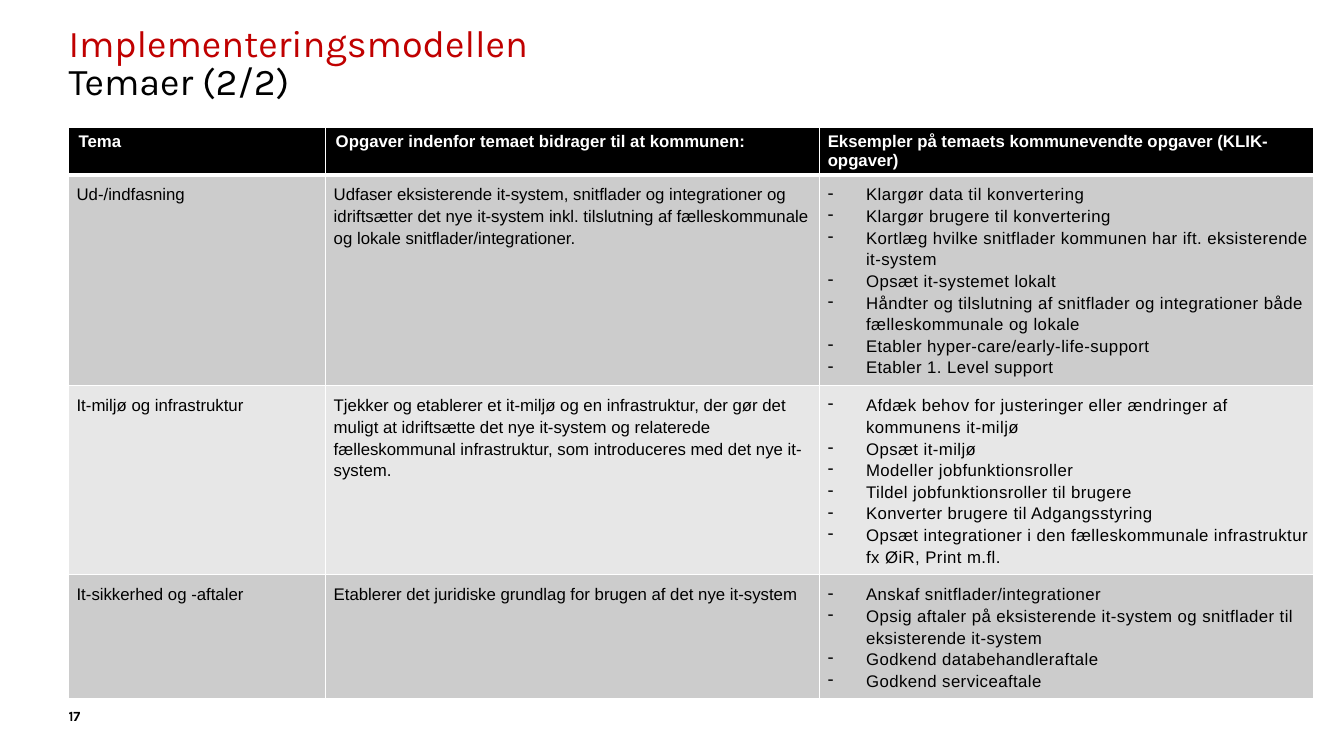
from lxml import etree
from pptx import Presentation, util as u
from pptx.dml.color import RGBColor
from pptx.enum import text
from pptx.oxml.ns import qn

RED = RGBColor(0xC0, 0x00, 0x00)
BLACK = RGBColor(0x00, 0x00, 0x00)
WHITE = RGBColor(0xFF, 0xFF, 0xFF)
GREY = RGBColor(0xCC, 0xCC, 0xCC)
LIGHT = RGBColor(0xE7, 0xE7, 0xE7)

HEADINGS = [
    "Tema",
    "Opgaver indenfor temaet bidrager til at kommunen:",
    "Eksempler på temaets kommunevendte opgaver (KLIK-opgaver)",
]
THEMES = [
    ("Ud-/indfasning",
     "Udfaser eksisterende it-system, snitflader og integrationer og idriftsætter "
     "det nye it-system inkl. tilslutning af fælleskommunale og lokale "
     "snitflader/integrationer.",
     ["Klargør data til konvertering",
      "Klargør brugere til konvertering",
      "Kortlæg hvilke snitflader kommunen har ift. eksisterende it-system",
      "Opsæt it-systemet lokalt",
      "Håndter og tilslutning af snitflader og integrationer både "
      "fælleskommunale og lokale",
      "Etabler hyper-care/early-life-support",
      "Etabler 1. Level support"]),
    ("It-miljø og infrastruktur",
     "Tjekker og etablerer et it-miljø og en infrastruktur, der gør det muligt at "
     "idriftsætte det nye it-system og relaterede fælleskommunal infrastruktur, "
     "som introduceres med det nye it-system.",
     ["Afdæk behov for justeringer eller ændringer af kommunens it-miljø",
      "Opsæt it-miljø",
      "Modeller jobfunktionsroller",
      "Tildel jobfunktionsroller til brugere",
      "Konverter brugere til Adgangsstyring",
      "Opsæt integrationer i den fælleskommunale infrastruktur fx ØiR, Print m.fl."]),
    ("It-sikkerhed og -aftaler",
     "Etablerer det juridiske grundlag for brugen af det nye it-system",
     ["Anskaf snitflader/integrationer",
      "Opsig aftaler på eksisterende it-system og snitflader til "
      "eksisterende it-system",
      "Godkend databehandleraftale",
      "Godkend serviceaftale"]),
]


def write(para, words, size=12, font="Arial", color=BLACK, bold=False,
          spacing=None, line=None, bullet=None):
    """Add one formatted span of text to a paragraph."""
    if line:
        para.line_spacing = line
    if bullet:
        props = para._p.get_or_add_pPr()
        indent = u.Inches(0.38)
        props.set("marL", str(indent))
        props.set("indent", str(-indent))
        etree.SubElement(props, qn("a:buChar")).set("char", bullet)
    span = para.add_run()
    span.text = words
    span.font.size, span.font.name, span.font.bold = u.Pt(size), font, bold
    span.font.color.rgb = color
    if spacing:
        span._r.get_or_add_rPr().set("spc", str(round(spacing * 100)))


class Page:
    """Style and current slide; lengths are percentages of the slide's size."""
    heading_font = "Karla"
    border = WHITE

    def __init__(self, deck):
        self.deck = deck
        self.slide = deck.slides.add_slide(deck.slide_layouts[5])

    def across(self, percent):
        return round(self.deck.slide_width * percent / 100)

    def down(self, percent):
        return round(self.deck.slide_height * percent / 100)

    def area(self, left, top, width, height):
        return self.across(left), self.down(top), self.across(width), self.down(height)

    def frame(self, box, anchor):
        frame = box.text_frame
        frame.auto_size = text.MSO_AUTO_SIZE.NONE
        frame.word_wrap = True
        frame.vertical_anchor = anchor
        frame.margin_left = frame.margin_right = 0
        frame.margin_top = frame.margin_bottom = 0
        para = frame.paragraphs[0]
        para.alignment = text.PP_ALIGN.LEFT
        return para

    def title(self, heading, subheading, *area):
        box = self.slide.shapes.title
        box.left, box.top, box.width, box.height = self.area(*area)
        para = self.frame(box, text.MSO_ANCHOR.TOP)
        style = dict(size=27, font=self.heading_font, line=u.Pt(27))
        write(para, heading, color=RED, **style)
        para.add_line_break()
        write(para, subheading, **style)

    def label(self, words, *area):
        box = self.slide.shapes.add_textbox(*self.area(*area))
        para = self.frame(box, text.MSO_ANCHOR.BOTTOM)
        write(para, words, size=10, font=self.heading_font, bold=True, line=u.Pt(13))

    def table(self, left, top, widths, heights):
        area = self.area(left, top, sum(widths), sum(heights))
        grid = self.slide.shapes.add_table(len(heights), len(widths), *area).table
        grid.horz_banding = False
        for column, width in zip(grid.columns, widths):
            column.width = self.across(width)
        for row, height in zip(grid.rows, heights):
            row.height = self.down(height)
        return grid

    def cell(self, cell, paragraphs, fill, margins, top=1, bottom=1, **style):
        # Borders go before the fill in the cell's properties
        props = cell._tc.get_or_add_tcPr()
        for side, width in zip("LRTB", (1, 1, top, bottom)):
            edge = etree.SubElement(props, qn(f"a:ln{side}"), w=str(u.Pt(width)))
            paint = etree.SubElement(edge, qn("a:solidFill"))
            etree.SubElement(paint, qn("a:srgbClr"), val=str(self.border))
        cell.fill.solid()
        cell.fill.fore_color.rgb = fill
        (cell.margin_left, cell.margin_top,
         cell.margin_right, cell.margin_bottom) = map(u.Inches, margins)
        frame = cell.text_frame
        for index, words in enumerate(paragraphs):
            para = frame.add_paragraph() if index else frame.paragraphs[0]
            write(para, words, **style)


def main():
    deck = Presentation()
    deck.slide_width, deck.slide_height = u.Inches(13.33), u.Inches(7.5)
    page = Page(deck)

    # Title
    page.title("Implementeringsmodellen", "Temaer (2/2)", 5.1, 3.6, 89.4, 12.27)

    # Table of themes
    grid = page.table(5.1, 16.8, [19.13, 36.76, 36.76], [6.2, 27.9, 25, 16.4])
    for column, heading in enumerate(HEADINGS):
        left = 0.08 if column == 2 else 0.1
        page.cell(grid.cell(0, column), [heading], BLACK, (left, 0.05, 0.1, 0.05),
                  bottom=3, color=WHITE, bold=True)
    for row, (theme, purpose, tasks) in enumerate(THEMES, 1):
        for column, paragraphs in enumerate(([theme], [purpose], tasks)):
            listed = dict(bullet="-", spacing=0.3) if column == 2 else {}
            page.cell(grid.cell(row, column), paragraphs, GREY if row % 2 else LIGHT,
                      (0.08, 0.08, 0.03, 0.08), top=3 if row == 1 else 1,
                      line=1.15, **listed)

    # Page number
    page.label("17", 5.1, 90.67, 3.9, 5.2)
    deck.save("out.pptx")


if __name__ == "__main__":
    main()
